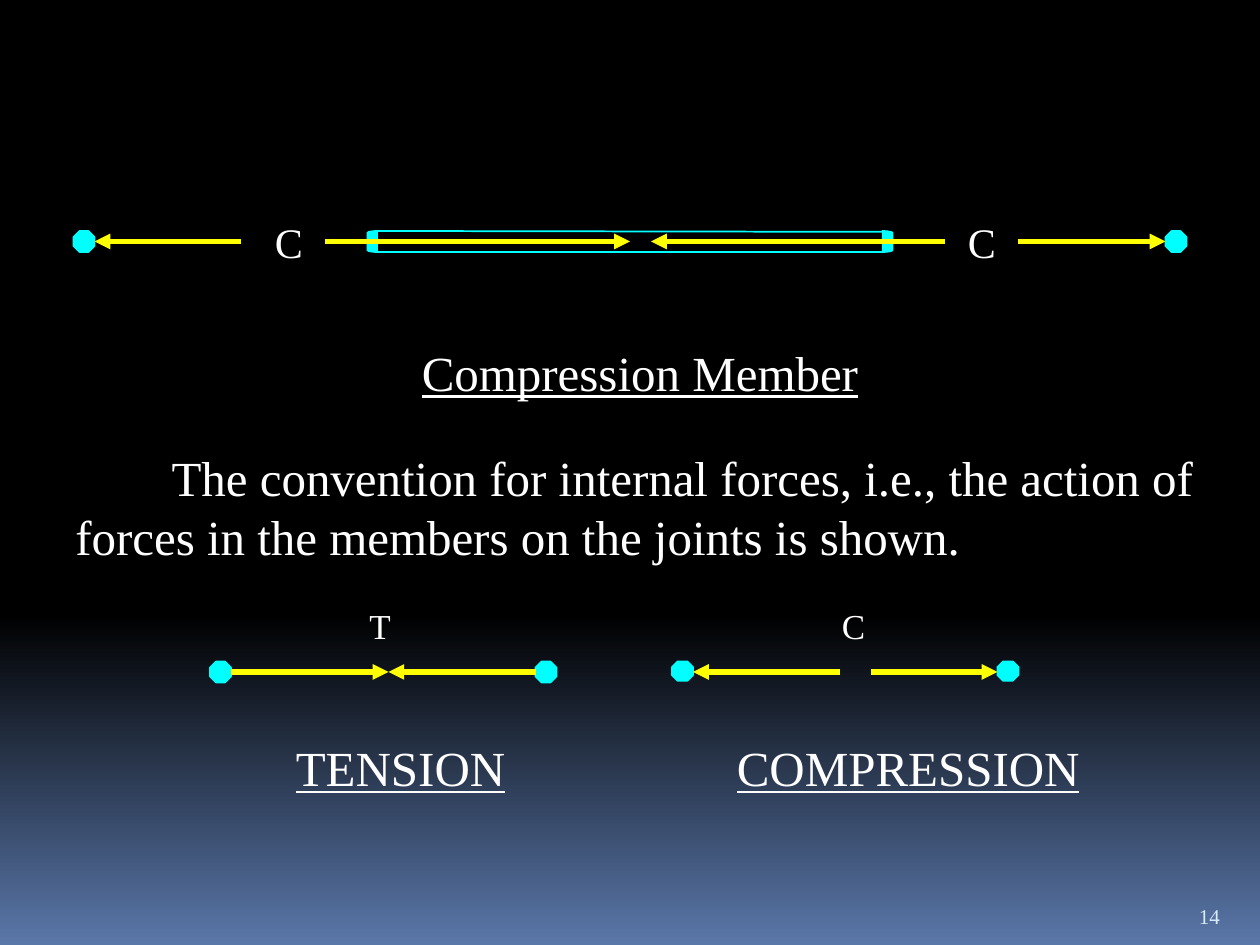
from lxml import etree
from pptx import Presentation
from pptx.dml.color import RGBColor
from pptx.enum import shapes, text
from pptx.oxml import ns
from pptx.util import Pt

BLACK = RGBColor(0x00, 0x00, 0x00)
SLATE = RGBColor(0x5A, 0x77, 0xA9)
CYAN = RGBColor(0x00, 0xFF, 0xFF)
YELLOW = RGBColor(0xFF, 0xFF, 0x00)
WHITE = RGBColor(0xFF, 0xFF, 0xFF)
PALE = RGBColor(0xD6, 0xEC, 0xFF)


class Sketch:
    font = "Times New Roman"

    def __init__(self, page):
        self.page = page

    def backdrop(self):
        fill = self.page.background.fill
        fill.gradient()
        fill.gradient_angle = 270
        for stop, position, color in zip(fill.gradient_stops, (0.65, 1), (BLACK, SLATE)):
            stop.position = position
            stop.color.rgb = color

    def label(self, words, left, top, width, height, size, color=WHITE,
              underline=None, wrap=True, indent=0, anchor=text.MSO_ANCHOR.TOP):
        box = self.page.shapes.add_textbox(Pt(left), Pt(top), Pt(width), Pt(height))
        frame = box.text_frame
        frame.text = words
        frame.word_wrap = wrap
        frame.vertical_anchor = anchor
        para = frame.paragraphs[0]
        if indent:
            para._p.get_or_add_pPr().set("indent", str(Pt(indent)))
        span = para.runs[0]
        span.font.name = self.font
        span.font.size = Pt(size)
        span.font.color.rgb = color
        span.font.underline = underline

    def solid(self, kind, left, top, width, height):
        shape = self.page.shapes.add_shape(kind, Pt(left), Pt(top), Pt(width), Pt(height))
        shape.shadow.inherit = False
        shape.fill.solid()
        shape.fill.fore_color.rgb = CYAN
        shape.line.color.rgb = CYAN
        shape.line.width = Pt(1)
        return shape

    def joint(self, left, top, height=12):
        self.solid(shapes.MSO_SHAPE.OCTAGON, left, top, 12, height)

    def bracket(self, kind, left):
        self.solid(kind, left, 132, 6, 12).adjustments[0] = 0.167

    def line(self, x1, y1, x2, y2, color=CYAN, width=1):
        line = self.page.shapes.add_connector(
            shapes.MSO_CONNECTOR.STRAIGHT, Pt(x1), Pt(y1), Pt(x2), Pt(y2))
        line.line.color.rgb = color
        line.line.width = Pt(width)
        etree.SubElement(line._element.spPr, ns.qn("a:effectLst"))
        return line

    def force(self, start, end, y):
        arrow = self.line(start, y, end, y, YELLOW, 3)
        head = etree.SubElement(arrow.line._get_or_add_ln(), ns.qn("a:tailEnd"))
        head.set("type", "triangle")


def main():
    deck = Presentation()
    deck.slide_width, deck.slide_height = Pt(720), Pt(540)
    sketch = Sketch(deck.slides.add_slide(deck.slide_layouts[6]))
    sketch.backdrop()

    sketch.bracket(shapes.MSO_SHAPE.LEFT_BRACKET, 210)
    sketch.line(216, 132, 504, 132.5)
    sketch.line(216, 144, 504, 144)
    sketch.bracket(shapes.MSO_SHAPE.RIGHT_BRACKET, 504)

    for left, top, height in ((42, 132, 12), (666, 132, 12), (120, 378, 12),
                              (306, 378, 12), (384, 378, 11), (570, 378, 11)):
        sketch.joint(left, top, height)

    for start, end in ((138, 54), (582, 666), (540, 372), (186, 360)):
        sketch.force(start, end, 138)
    for start, end in ((132, 222), (306, 222), (480, 396), (498, 570)):
        sketch.force(start, end, 384)

    for left in (150, 546):
        sketch.label("C", left, 120, 30, 36, 24)
    for letter, left in (("T", 204), ("C", 474)):
        sketch.label(letter, left, 342, 30, 31, 20)

    sketch.label("Compression Member", 234, 192, 294, 41, 28, underline=True)
    sketch.label("The convention for internal forces, i.e., the action of forces "
                 "in the members on the joints is shown.",
                 36, 252, 684, 74, 28, indent=55)
    sketch.label("TENSION", 162, 418, 135, 41, 28, underline=True, wrap=False)
    sketch.label("COMPRESSION", 414, 418, 211, 41, 28, underline=True, wrap=False)
    sketch.label("14", 678, 505.5, 36, 29, 12, PALE, anchor=text.MSO_ANCHOR.BOTTOM)

    deck.save("out.pptx")


if __name__ == "__main__":
    main()
